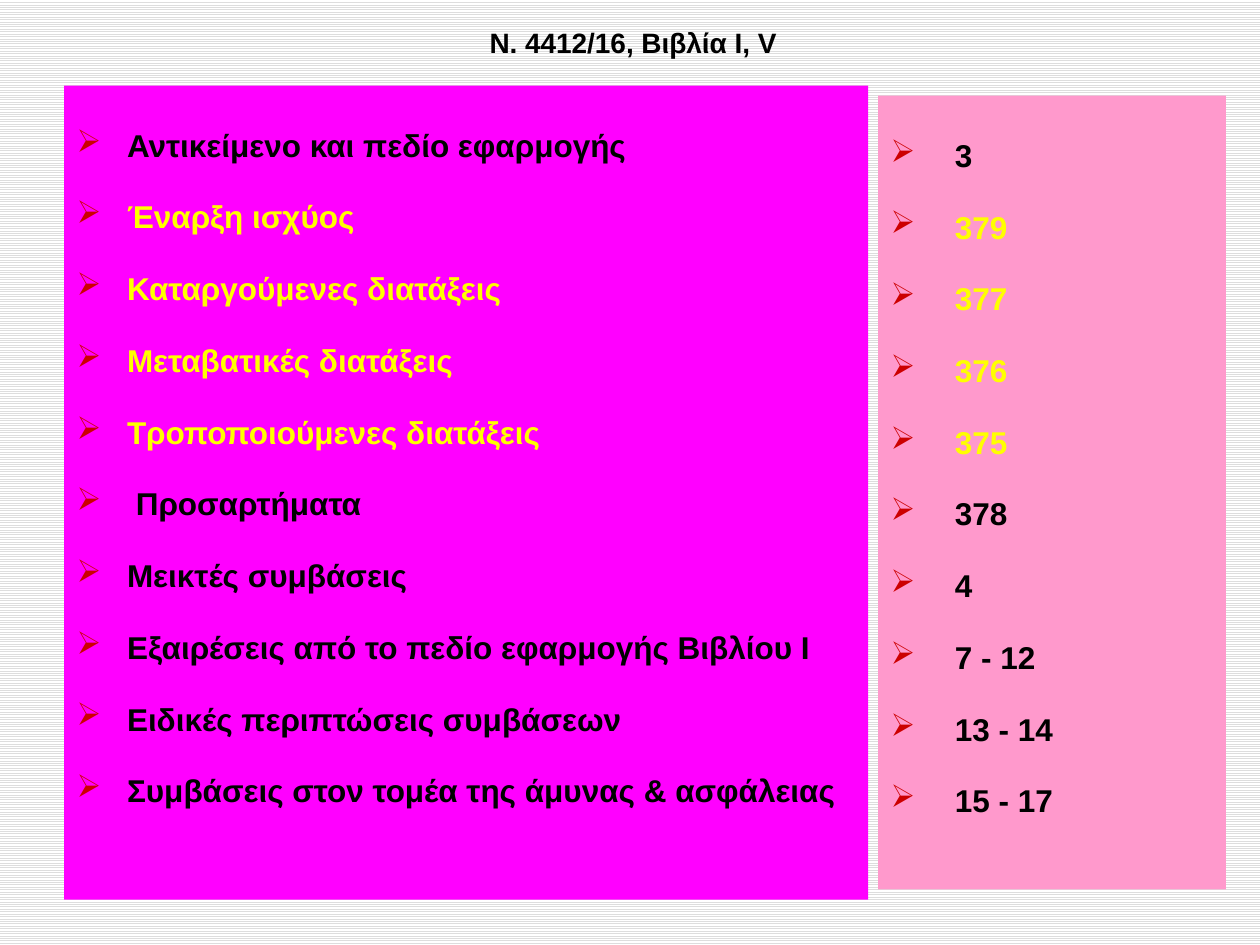
from lxml.etree import SubElement
from pptx import Presentation
from pptx.dml.color import RGBColor
from pptx.enum.dml import MSO_PATTERN as Pattern
from pptx.enum.shapes import MSO_SHAPE as Shape
from pptx.enum.text import MSO_ANCHOR as Anchor, PP_ALIGN as Align
from pptx.oxml.ns import qn
from pptx.util import Inches, Pt

BLACK = RGBColor(0, 0, 0)
WHITE = RGBColor(255, 255, 255)
GREY = RGBColor(0xDD, 0xDD, 0xDD)
YELLOW = RGBColor(255, 255, 0)
MAGENTA = RGBColor(255, 0, 255)
PINK = RGBColor(255, 0x99, 0xCC)
RED = RGBColor(0xCC, 0, 0)


def style(para, size, color):
    font = para.font
    font.name, font.size, font.bold = "Arial", Pt(size), True
    font.color.rgb = color


def add_bullet(para, indent):
    """Give the paragraph a red arrow bullet with a hanging indent."""
    props = para._p.get_or_add_pPr()
    props.set("marL", str(indent))
    props.set("indent", str(-indent))
    color = SubElement(props, qn("a:buClr"))
    SubElement(color, qn("a:srgbClr"), val=str(RED))
    SubElement(props, qn("a:buChar"), char="➢")


# Each row: subject, articles of the law, text colour
rows = [
    ("Αντικείμενο και πεδίο εφαρμογής", "3", BLACK),
    ("Έναρξη ισχύος", "379", YELLOW),
    ("Καταργούμενες διατάξεις", "377", YELLOW),
    ("Μεταβατικές διατάξεις", "376", YELLOW),
    ("Τροποποιούμενες διατάξεις", "375", YELLOW),
    (" Προσαρτήματα", "378", BLACK),
    ("Μεικτές συμβάσεις", "4", BLACK),
    ("Εξαιρέσεις από το πεδίο εφαρμογής Βιβλίου Ι", "7 - 12", BLACK),
    ("Ειδικές περιπτώσεις συμβάσεων", "13 - 14", BLACK),
    ("Συμβάσεις στον τομέα της άμυνας & ασφάλειας", "15 - 17", BLACK),
]
subjects, articles, colors = zip(*rows)

# Each panel: left, top, width, height, fill, indent, lines
panels = [
    (0.51, 0.68, 6.38, 6.46, MAGENTA, 0.4, subjects),
    (6.97, 0.76, 2.76, 6.3, PINK, 0.51, articles),
]

deck = Presentation()
deck.slide_width, deck.slide_height = Inches(10), Inches(7.5)
slide = deck.slides.add_slide(deck.slide_layouts[6])

back = slide.background.fill
back.patterned()
back.pattern = Pattern.LIGHT_HORIZONTAL
back.fore_color.rgb = GREY
back.back_color.rgb = WHITE

title = slide.shapes.add_textbox(
    Inches(0.67), Inches(0.13), Inches(8.71), Inches(0.39))
frame = title.text_frame
frame.word_wrap = True
frame.vertical_anchor = Anchor.BOTTOM
para = frame.paragraphs[0]
para.text = "Ν. 4412/16, Βιβλία I, V"
para.alignment = Align.CENTER
style(para, 16, BLACK)

for left, top, width, height, fill, indent, lines in panels:
    panel = slide.shapes.add_shape(
        Shape.RECTANGLE, Inches(left), Inches(top), Inches(width), Inches(height))
    panel.shadow.inherit = False
    panel.fill.solid()
    panel.fill.fore_color.rgb = fill
    panel.line.fill.background()
    frame = panel.text_frame
    frame.word_wrap = True
    frame.vertical_anchor = Anchor.TOP
    frame.text = "\n".join(lines)
    for para, color in zip(frame.paragraphs, colors):
        para.alignment = Align.LEFT
        para.line_spacing = Pt(41)
        style(para, 18, color)
        add_bullet(para, Inches(indent))

deck.save("out.pptx")
